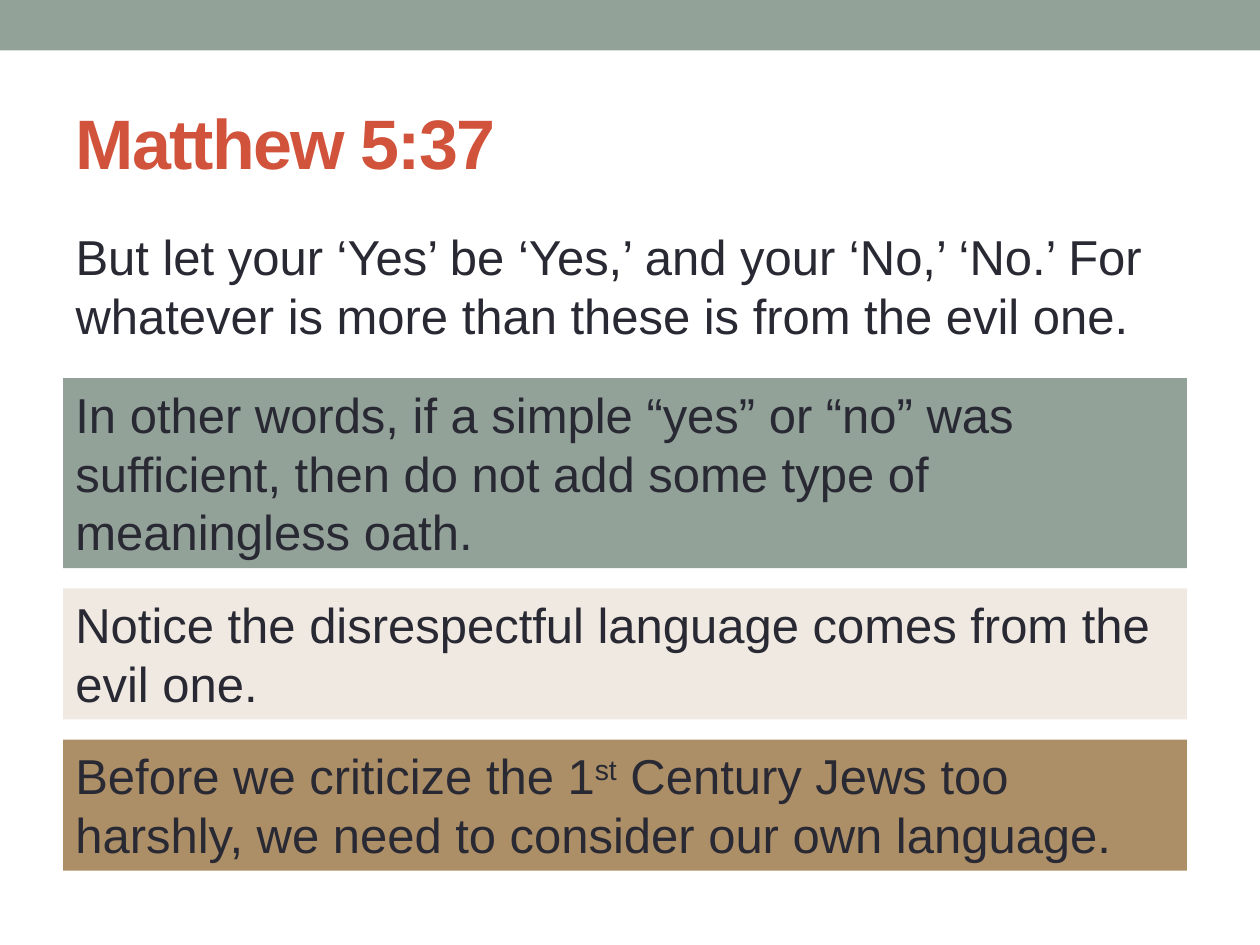
import dataclasses

import pptx
import pptx.dml.color
import pptx.enum.shapes
import pptx.enum.text
import pptx.oxml.ns
import pptx.util
from pptx.util import Inches


@dataclasses.dataclass(frozen=True)
class Theme:
    font: str = "Arial"
    title_size: int = 40
    body_size: int = 28
    title: str = "D2533C"
    ink: str = "292934"
    sage: str = "93A299"
    cream: str = "EFE9E1"
    tan: str = "AD8F67"


THEME = Theme()
LEFT = 0.5
CARD_WIDTH = 8.92
CARD_GAP = 0.16
CARDS_TOP = 3
SUPERSCRIPT = 30000

CARDS = [
    (1.51, THEME.sage, [
        ("In other words, if a simple “yes” or “no” was sufficient, "
         "then do not add some type of meaningless oath.", 0),
    ]),
    (1.04, THEME.cream, [
        ("Notice the disrespectful language comes from the evil one.", 0),
    ]),
    (1.04, THEME.tan, [
        ("Before we criticize the 1", 0),
        ("st", SUPERSCRIPT),
        (" Century Jews too harshly, we need to consider our own language.", 0),
    ]),
]


def rgb(value):
    return pptx.dml.color.RGBColor.from_string(value)


def place(box, left, top, width, height):
    box.left, box.top = Inches(left), Inches(top)
    box.width, box.height = Inches(width), Inches(height)


def write(box, spans, size, color, anchor, bold=False):
    frame = box.text_frame
    frame.word_wrap = True
    frame.auto_size = pptx.enum.text.MSO_AUTO_SIZE.NONE
    frame.vertical_anchor = anchor
    para = frame.paragraphs[0]
    para.alignment = pptx.enum.text.PP_ALIGN.LEFT
    para.font.name = THEME.font
    para.font.size = pptx.util.Pt(size)
    para.font.bold = bold
    para.font.color.rgb = rgb(color)
    for text, baseline in spans:
        span = para.add_run()
        span.text = text
        if baseline:
            span.font._element.set("baseline", str(baseline))
    return para


def add_panel(page, left, top, width, height, color):
    panel = page.shapes.add_shape(
        pptx.enum.shapes.MSO_SHAPE.RECTANGLE,
        Inches(left), Inches(top), Inches(width), Inches(height))
    panel.shadow.inherit = False
    panel.fill.solid()
    panel.fill.fore_color.rgb = rgb(color)
    panel.line.fill.background()
    return panel


def fill_title(box, text):
    place(box, LEFT, 0.58, 9, 1.08)
    para = write(box, [(text, 0)], THEME.title_size, THEME.title,
                 pptx.enum.text.MSO_ANCHOR.MIDDLE, bold=True)
    para.runs[0].font._element.set("spc", "-100")


def fill_verse(box, text):
    place(box, LEFT, 1.75, 9, 1)
    para = write(box, [(text, 0)], THEME.body_size, THEME.ink,
                 pptx.enum.text.MSO_ANCHOR.TOP)
    properties = para._p.get_or_add_pPr()
    properties.set("marL", "0")
    properties.set("indent", "0")
    no_bullet = properties.makeelement(pptx.oxml.ns.qn("a:buNone"), {})
    properties.find(pptx.oxml.ns.qn("a:defRPr")).addprevious(no_bullet)


def add_cards(page):
    top = CARDS_TOP
    for height, color, spans in CARDS:
        card = add_panel(page, LEFT, top, CARD_WIDTH, height, color)
        write(card, spans, THEME.body_size, THEME.ink,
              pptx.enum.text.MSO_ANCHOR.TOP)
        top += height + CARD_GAP


def main():
    deck = pptx.Presentation()
    deck.slide_width, deck.slide_height = Inches(10), Inches(7.5)
    page = deck.slides.add_slide(deck.slide_layouts[1])
    add_panel(page, 0, 0, 10, 0.4, THEME.sage)
    fill_title(page.shapes.title, "Matthew 5:37")
    fill_verse(page.placeholders[1],
               "But let your ‘Yes’ be ‘Yes,’ and your ‘No,’ ‘No.’ "
               "For whatever is more than these is from the evil one.")
    add_cards(page)
    deck.save("out.pptx")


if __name__ == "__main__":
    main()
